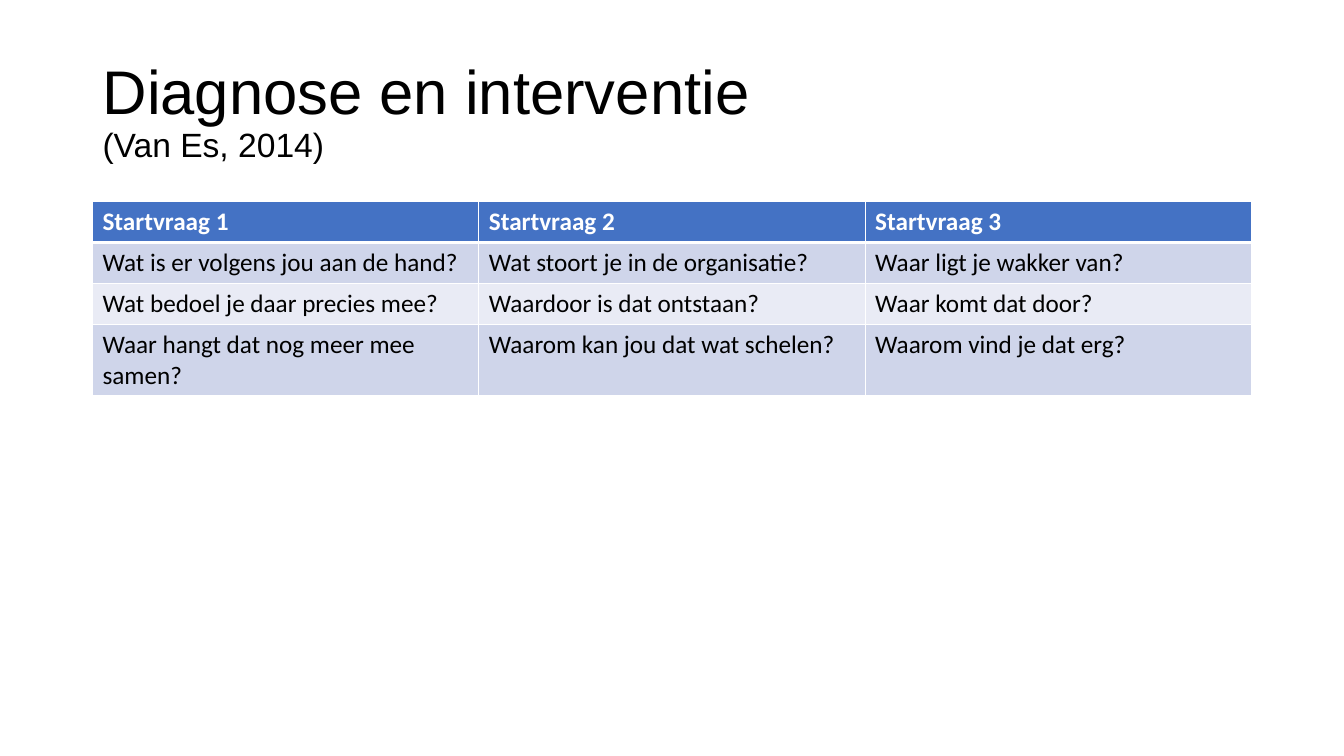
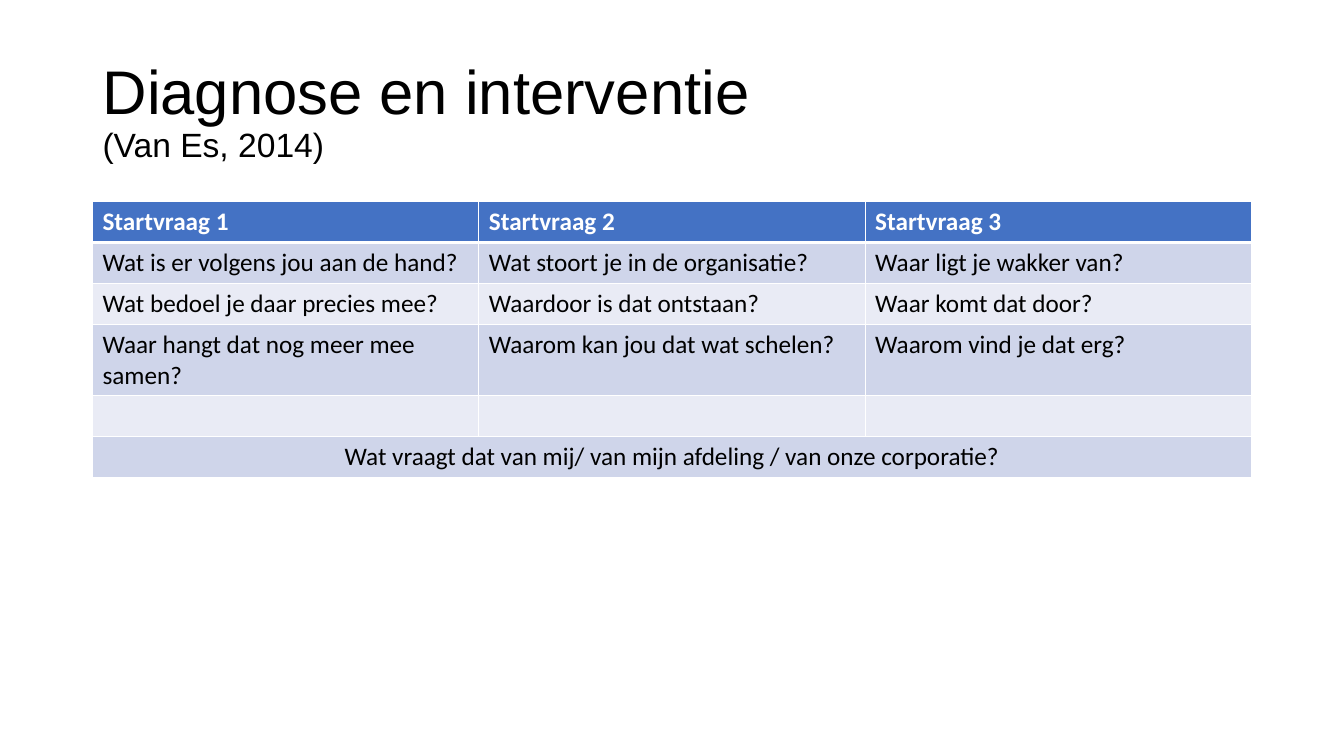
from lxml import etree
from pptx import Presentation
from pptx.dml.color import RGBColor
from pptx.enum.text import MSO_ANCHOR, MSO_AUTO_SIZE, PP_ALIGN
from pptx.oxml.ns import qn
from pptx.util import Cm, Pt

MIDDLE = MSO_ANCHOR.MIDDLE
NO_AUTOFIT = MSO_AUTO_SIZE.NONE
LEFT, CENTER = PP_ALIGN.LEFT, PP_ALIGN.CENTER

COLORS = {
    "text": "000000",
    "header_text": "FFFFFF",
    "border": "FFFFFF",
    "header": "4472C4",
    "band_dark": "CFD5EA",
    "band_light": "E9EBF5",
}
TITLE_FONT, TABLE_FONT = "Arial", "Calibri"
TITLE_BOX = (Cm(2.33), Cm(1.01), Cm(29.21), Cm(3.68))
TABLE_BOX = (Cm(2.33), Cm(5.08), Cm(29.21))
ROW_HEIGHT = Cm(1.03)
TITLE_ONLY = 5

QUESTIONS = [
    ("Startvraag 1", "Startvraag 2", "Startvraag 3"),
    ("Wat is er volgens jou aan de hand?", "Wat stoort je in de organisatie?", "Waar ligt je wakker van?"),
    ("Wat bedoel je daar precies mee?", "Waardoor is dat ontstaan?", "Waar komt dat door?"),
    ("Waar hangt dat nog meer mee samen?", "Waarom kan jou dat wat schelen?", "Waarom vind je dat erg?"),
]
CLOSING_QUESTION = "Wat vraagt dat van mij/ van mijn afdeling / van onze corporatie?"


def add_run(paragraph, text, font_name, size, color, bold=False):
    run = paragraph.add_run()
    run.text = text
    run.font.name = font_name
    run.font.size = Pt(size)
    run.font.bold = bold
    run.font.color.rgb = RGBColor.from_string(COLORS[color])


def add_title(slide, box):
    title = slide.shapes.title
    title.left, title.top, title.width, title.height = box
    frame = title.text_frame
    frame.word_wrap = True
    frame.auto_size = NO_AUTOFIT
    frame.vertical_anchor = MIDDLE
    paragraph = frame.paragraphs[0]
    paragraph.alignment = LEFT
    paragraph.line_spacing = 0.9
    add_run(paragraph, "Diagnose en interventie", TITLE_FONT, 44, "text")
    paragraph.add_line_break()
    add_run(paragraph, "(Van Es, 2014)", TITLE_FONT, 24, "text")


def set_borders(cell, top, bottom):
    properties = cell._tc.get_or_add_tcPr()
    for side, width in (("L", 1), ("R", 1), ("T", top), ("B", bottom)):
        line = etree.SubElement(properties, qn(f"a:ln{side}"), w=str(Pt(width)))
        fill = etree.SubElement(line, qn("a:solidFill"))
        etree.SubElement(fill, qn("a:srgbClr"), val=COLORS["border"])


def format_cell(cell, row_index):
    set_borders(cell, top=3 if row_index == 1 else 1, bottom=3 if row_index == 0 else 1)
    if row_index == 0:
        color = "header"
    else:
        color = "band_dark" if row_index % 2 else "band_light"
    cell.fill.solid()
    cell.fill.fore_color.rgb = RGBColor.from_string(COLORS[color])


def add_question_table(slide, box, rows, closing=None):
    left, top, width = box
    column_count = len(rows[0])
    row_count = len(rows) + (2 if closing else 0)
    frame = slide.shapes.add_table(row_count, column_count, left, top, width, ROW_HEIGHT * row_count)
    table = frame.table
    table.horz_banding = False
    for row_index in range(row_count):
        table.rows[row_index].height = ROW_HEIGHT
        for column_index in range(column_count):
            format_cell(table.cell(row_index, column_index), row_index)
    for row_index, texts in enumerate(rows):
        is_header = row_index == 0
        color = "header_text" if is_header else "text"
        for column_index, text in enumerate(texts):
            paragraph = table.cell(row_index, column_index).text_frame.paragraphs[0]
            add_run(paragraph, text, TABLE_FONT, 18, color, is_header)
    if closing:
        closing_cell = table.cell(row_count - 1, 0)
        closing_cell.merge(table.cell(row_count - 1, column_count - 1))
        paragraph = closing_cell.text_frame.paragraphs[0]
        paragraph.alignment = CENTER
        add_run(paragraph, closing, TABLE_FONT, 18, "text")


def add_question_slide(presentation, closing=None):
    slide = presentation.slides.add_slide(presentation.slide_layouts[TITLE_ONLY])
    add_title(slide, TITLE_BOX)
    add_question_table(slide, TABLE_BOX, QUESTIONS, closing)


def main():
    presentation = Presentation()
    presentation.slide_width = Cm(33.87)
    presentation.slide_height = Cm(19.05)
    add_question_slide(presentation)
    add_question_slide(presentation, CLOSING_QUESTION)
    presentation.save("out.pptx")


if __name__ == "__main__":
    main()
